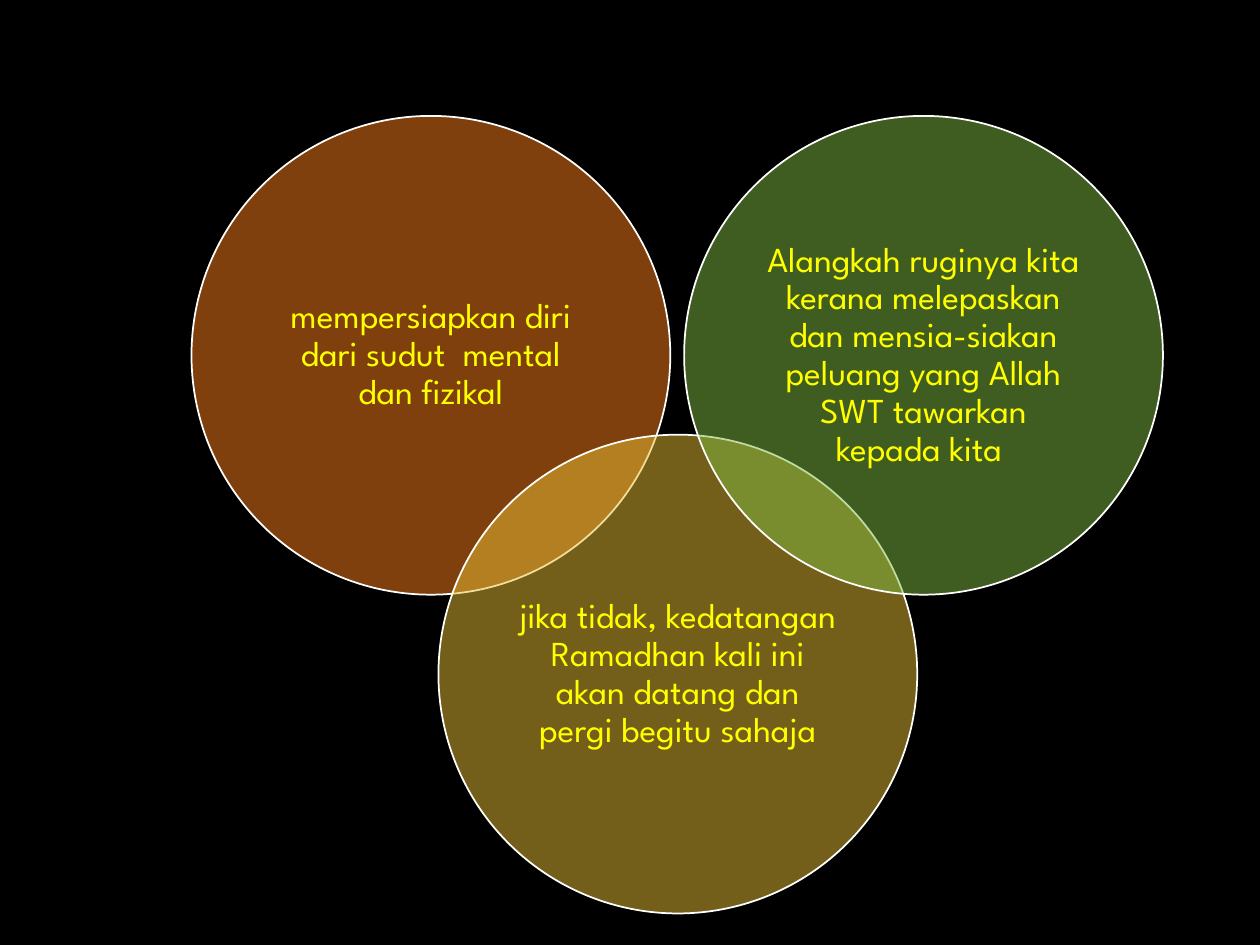
from lxml import etree
from pptx import Presentation
from pptx.dml.color import RGBColor
from pptx.enum import shapes, text
from pptx.oxml import ns
from pptx.util import Inches, Pt

# Content: left, top, fill colour, wording (back to front)
CIRCLES = [
    (1.52, 0.92, "FE801A", "mempersiapkan diri dari sudut  mental dan fizikal"),
    (3.48, 3.45, "E9BF35", "jika tidak, kedatangan Ramadhan kali ini akan datang "
                           "dan pergi begitu sahaja"),
    (5.43, 0.92, "81BB42", "Alangkah ruginya kita kerana melepaskan dan mensia-siakan "
                           "peluang yang Allah SWT tawarkan kepada kita "),
]
DIAMETER = 3.8
INSET = 0.08


def set_fill(fill, colour, opacity=None):
    fill.solid()
    fill.fore_color.rgb = RGBColor.from_string(colour)
    if opacity is not None:
        colour_element = fill._xPr.find(".//" + ns.qn("a:srgbClr"))
        alpha = etree.SubElement(colour_element, ns.qn("a:alpha"))
        alpha.set("val", str(opacity * 1000))


def write_text(shape, wording, size=20, font="League Spartan", colour="FFFF00"):
    frame = shape.text_frame
    frame.word_wrap = True
    frame.vertical_anchor = text.MSO_ANCHOR.MIDDLE
    frame.margin_left = frame.margin_right = Inches(INSET)
    frame.margin_top = frame.margin_bottom = Inches(INSET)
    paragraph = frame.paragraphs[0]
    paragraph.alignment = text.PP_ALIGN.CENTER
    paragraph.line_spacing = 0.9
    run = paragraph.add_run()
    run.text = wording
    run.font.size = Pt(size)
    run.font.name = font
    set_fill(run.font.fill, colour)


def add_circle(slide, left, top, colour, wording):
    circle = slide.shapes.add_shape(
        shapes.MSO_SHAPE.OVAL, Inches(left), Inches(top),
        Inches(DIAMETER), Inches(DIAMETER))
    circle.shadow.inherit = False
    set_fill(circle.fill, colour, opacity=50)
    set_fill(circle.line.fill, "FFFFFF")
    circle.line.width = Pt(1)
    write_text(circle, wording)


def main():
    presentation = Presentation()
    presentation.slide_width = Inches(10)
    presentation.slide_height = Inches(7.5)
    slide = presentation.slides.add_slide(presentation.slide_layouts[6])
    set_fill(slide.background.fill, "000000")

    # Overlapping translucent circles
    for circle in CIRCLES:
        add_circle(slide, *circle)

    presentation.save("out.pptx")


if __name__ == "__main__":
    main()
